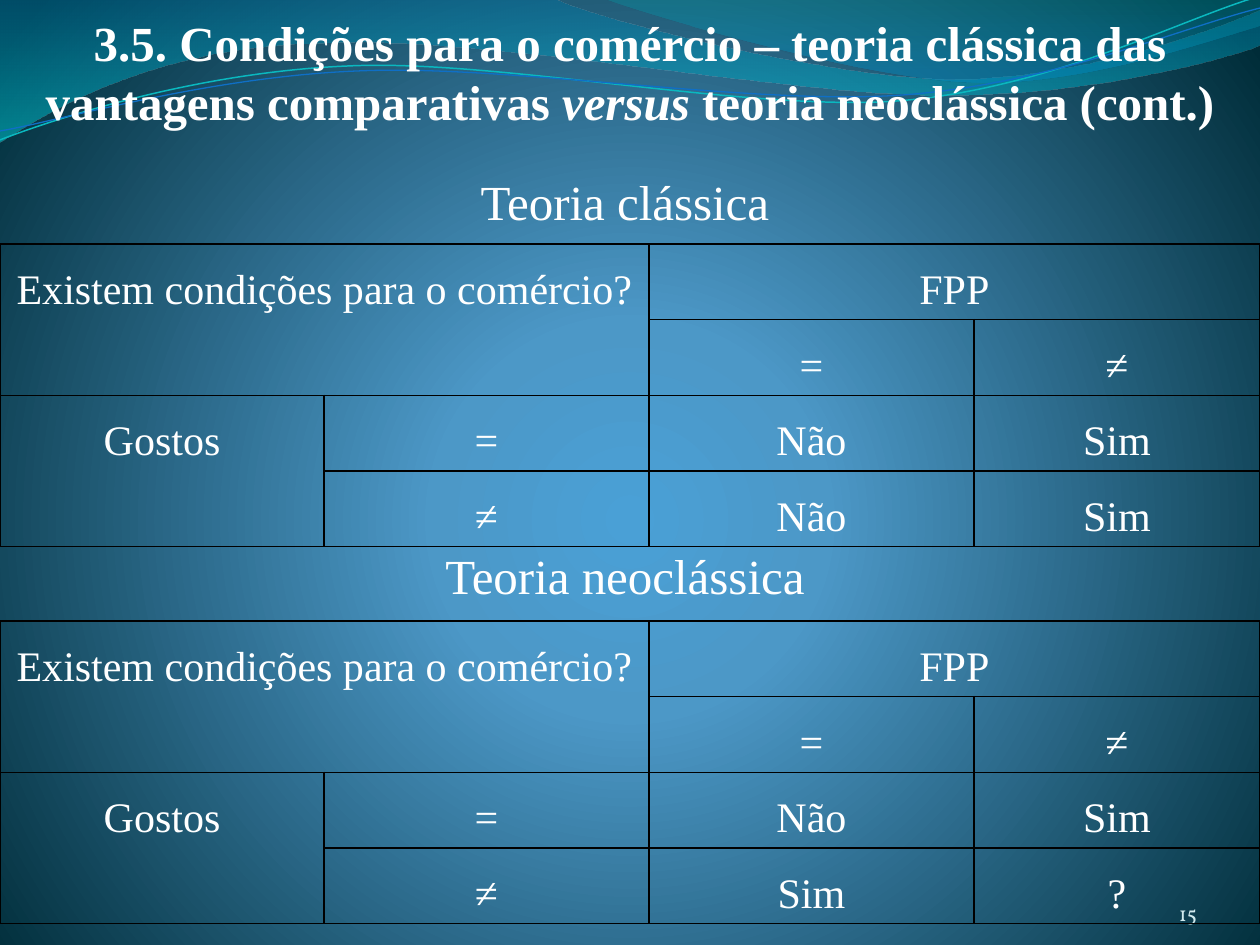
from math import cos, radians, sin

from lxml import etree
from pptx import Presentation
from pptx.dml.color import RGBColor
from pptx.enum.text import MSO_ANCHOR, MSO_AUTO_SIZE, PP_ALIGN
from pptx.oxml.ns import qn
from pptx.util import Pt

PX = 914400 / 126
CENTER, RIGHT = PP_ALIGN.CENTER, PP_ALIGN.RIGHT
TOP, MIDDLE, BOTTOM = MSO_ANCHOR.TOP, MSO_ANCHOR.MIDDLE, MSO_ANCHOR.BOTTOM
GROW = MSO_AUTO_SIZE.SHAPE_TO_FIT_TEXT
SERIF = "Times New Roman"
COLORS = {
    "white": "FFFFFF", "black": "000000", "number": "D1EAEE",
    "glow": "4AA0D6", "mid": "4C98C7", "deep": "002C38",
    "blue": "0074A1", "cyan": "00C6CF", "teal": "00A1A9", "azure": "008BBF",
    "cyan line": "0AB8BF", "blue line": "0F6FC6",
}


def set_gradient(fill, holder, stops, direction):
    """Fill with (position %, color, opacity %) stops along a direction."""
    fill.gradient()
    gradient = next(holder.iter(qn("a:gradFill")))
    for child in list(gradient):
        gradient.remove(child)
    stop_list = etree.SubElement(gradient, qn("a:gsLst"))
    for position, color, opacity in stops:
        stop = etree.SubElement(stop_list, qn("a:gs"), pos=str(position * 1000))
        tint = etree.SubElement(stop, qn("a:srgbClr"), val=COLORS[color])
        if opacity < 100:
            etree.SubElement(tint, qn("a:alpha"), val=str(opacity * 1000))
    gradient.append(direction)


def write_text(frame, spans, size, align=CENTER, font=SERIF, color="white", bold=False):
    """Write (text, italic) spans into the first paragraph and return it."""
    para = frame.paragraphs[0]
    para.alignment = align
    for text, italic in spans:
        span = para.add_run()
        span.text = text
        span.font.name = font
        span.font.size = Pt(size)
        span.font.bold = bold
        span.font.italic = italic
        span.font.color.rgb = RGBColor.from_string(COLORS[color])
    return para


deck = Presentation()
deck.slide_width, deck.slide_height = int(1260 * PX), int(945 * PX)
page = deck.slides.add_slide(deck.slide_layouts[5])

# Background: radial glow
circle = etree.Element(qn("a:path"), path="circle")
etree.SubElement(circle, qn("a:fillToRect"), l="10000", t="110000", r="10000", b="100000")
set_gradient(page.background.fill, page.element,
             [(0, "glow", 100), (25, "mid", 100), (100, "deep", 100)], circle)

# Waves: start point, then lines (x, y) and Bezier curves (two controls, end)
TILT = 2.7
waves = [
    ([(0, 0), (554, -1), (600, 21, 837, 79, 955, 79), (1075, 79, 1207, 33, 1260, 11),
      (1261, 45), (1239, 55, 1096, 96, 940, 95), (784, 95, 481, 35, 324, 43),
      (163, 45, 58, 105, -1, 142), (0, 0)],
     [(0, "blue", 45), (100, "cyan", 55)], None),
    ([(604, -1), (642, 14, 859, 78, 969, 82), (1079, 87, 1211, 40, 1260, 26), (1260, 0),
      (604, -1)],
     [(0, "teal", 30), (80, "azure", 45)], None),
    ([(0, 140), (60, 117, 199, 72, 349, 66), (498, 59, 747, 112, 898, 101),
      (1050, 89, 1182, 19, 1257, -3)], None, ("cyan line", 0.85, 629, 72)),
    ([(0, 131), (59, 121, 207, 77, 357, 71), (508, 64, 752, 106, 903, 95),
      (1053, 84, 1186, 26, 1260, 8)], None, ("blue line", 0.75, 629, 74)),
]
for segments, stops, stroke in waves:
    points = [segment[i:i + 2] for segment in segments for i in range(0, len(segment), 2)]
    if stroke:
        # Level the points about the center; the shape's rotation tilts them back
        color, width, cx, cy = stroke
        c, s = cos(radians(TILT)), sin(radians(TILT))
        points = [(cx + (x - cx) * c - (y - cy) * s, cy + (x - cx) * s + (y - cy) * c)
                  for x, y in points]
    points = [(int(x * PX), int(y * PX)) for x, y in points]
    builder = page.shapes.build_freeform(*points[0])
    builder.add_line_segments(points[1:], close=stops is not None)
    wave = builder.convert_to_shape()
    wave.shadow.inherit = False

    # Join each control, control, end triple into one curve
    vertices = wave.element.iter(qn("a:lnTo"))
    vertices = iter(list(vertices))
    for segment in segments[1:]:
        vertex = next(vertices)
        if len(segment) == 6:
            vertex.addprevious(curve := etree.Element(qn("a:cubicBezTo")))
            for corner in (vertex, next(vertices), next(vertices)):
                curve.append(corner[0])
                corner.getparent().remove(corner)

    if stops:
        down = etree.Element(qn("a:lin"), ang="5400000", scaled="0")
        set_gradient(wave.fill, wave.element, stops, down)
        wave.line.fill.background()
    else:
        wave.rotation = 360 - TILT
        wave.fill.background()
        wave.line.color.rgb = RGBColor.from_string(COLORS[color])
        wave.line.width = Pt(width)

# Title, brought in front of the waves
title = page.shapes.title
title.element.getparent().append(title.element)
title.left, title.top, title.width, title.height = (int(v * PX) for v in (0, 6, 1260, 131))
title.text_frame.word_wrap = True
title.text_frame.auto_size = GROW
title.text_frame.vertical_anchor = TOP
write_text(title.text_frame, [
    ("3.5. Condições para o comércio – teoria clássica das vantagens comparativas ", False),
    ("versus ", True),
    ("teoria neoclássica (cont.)", False),
], 28, bold=True)

# Page number
box = page.shapes.add_textbox(*(int(v * PX) for v in (1092, 876, 105, 50)))
frame = box.text_frame
frame.word_wrap = True
frame.vertical_anchor = BOTTOM
frame.margin_left = frame.margin_top = frame.margin_right = frame.margin_bottom = 0
write_text(frame, [("15", False)], 12, RIGHT, "Vollkorn", "number")

# One heading and table per theory; only the last row differs
COLUMNS = [324, 325, 325, 286]
ROW = 66
MERGES = [((0, 0), (1, 1)), ((0, 2), (0, 3)), ((2, 0), (3, 0))]
theories = [
    ("Teoria clássica", 165, 244, ["Não", "Sim"]),
    ("Teoria neoclássica", 539, 621, ["Sim", "?"]),
]
for heading, heading_top, table_top, answers in theories:
    box = page.shapes.add_textbox(*(int(v * PX) for v in (-5, heading_top, 1260, 72)))
    box.text_frame.word_wrap = True
    box.text_frame.auto_size = GROW
    box.text_frame.vertical_anchor = MIDDLE
    write_text(box.text_frame, [(heading, False)], 28)

    rows = [
        ["Existem condições para o comércio?", "", "FPP", ""],
        ["", "", "=", "≠"],
        ["Gostos", "=", "Não", "Sim"],
        ["", "≠", *answers],
    ]
    table = page.shapes.add_table(
        4, 4, *(int(v * PX) for v in (0, table_top, 1260, 4 * ROW))).table
    table.first_row = table.horz_banding = False
    for column, width in zip(table.columns, COLUMNS):
        column.width = int(width * PX)
    for row in table.rows:
        row.height = int(ROW * PX)
    for first, last in MERGES:
        table.cell(*first).merge(table.cell(*last))

    for r, texts in enumerate(rows):
        for c, text in enumerate(texts):
            cell = table.cell(r, c)
            cell.margin_left = cell.margin_right = int(9 * PX)
            cell.margin_top = cell.margin_bottom = 0
            cell.fill.background()
            properties = cell._tc.get_or_add_tcPr()
            for place, side in enumerate(("a:lnL", "a:lnR", "a:lnT", "a:lnB")):
                border = etree.Element(qn(side), w=str(Pt(1)))
                solid = etree.SubElement(border, qn("a:solidFill"))
                etree.SubElement(solid, qn("a:srgbClr"), val=COLORS["black"])
                properties.insert(place, border)
            if text:
                para = write_text(cell.text_frame, [(text, False)], 24)
                para.line_spacing = 1.5
                para.space_before = para.space_after = Pt(6)

deck.save("out.pptx")
